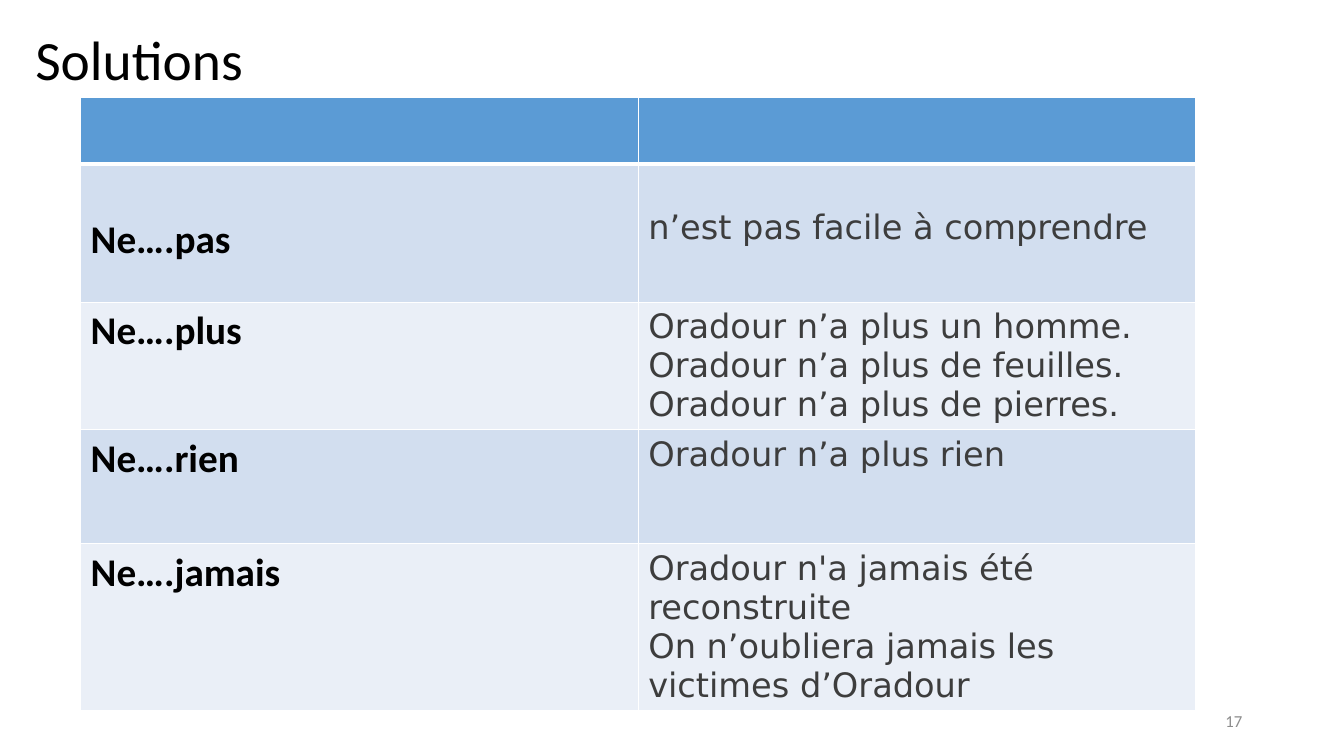
from lxml.etree import SubElement
from pptx import Presentation
from pptx.dml.color import RGBColor
from pptx.enum.text import MSO_ANCHOR as Anchor, PP_ALIGN as Align
from pptx.oxml.ns import qn
from pptx.util import Pt

PX = 9144
COLORS = {
    "black": "000000",
    "answer": "3D3D3D",
    "number": "8C8C8C",
    "border": "FFFFFF",
    "header": "5B9BD5",
    "odd": "D2DEEF",
    "even": "EAEFF7",
}
SOLUTIONS = [
    ("Ne….pas", ["n’est pas facile à comprendre"]),
    ("Ne….plus", ["Oradour n’a plus un homme. Oradour n’a plus de feuilles. "
                  "Oradour n’a plus de pierres."]),
    ("Ne….rien", ["Oradour n’a plus rien"]),
    ("Ne….jamais", ["Oradour n'a jamais été reconstruite",
                    "On n’oubliera jamais les victimes d’Oradour"]),
]
ROW_HEIGHTS = [66, 137, 126, 113, 166]
FIRST_ROW_TOPS = [52, 44]


def px(*lengths):
    return [length * PX for length in lengths]


def color(name):
    return RGBColor.from_string(COLORS[name])


def write(frame, lines, size, tint="black", font="Calibri", bold=False,
          align=Align.LEFT, spacing=None):
    for index, line in enumerate(lines):
        para = frame.add_paragraph() if index else frame.paragraphs[0]
        para.alignment = align
        if spacing:
            para.line_spacing = spacing
        span = para.add_run()
        span.text = line
        span.font.size = Pt(size)
        span.font.name = font
        span.font.bold = bold
        span.font.color.rgb = color(tint)


def style_cell(cell, tint, top=1, bottom=1):
    properties = cell._tc.get_or_add_tcPr()
    for side, width in (("L", 1), ("R", 1), ("T", top), ("B", bottom)):
        line = SubElement(properties, qn(f"a:ln{side}"), w=str(Pt(width)))
        fill = SubElement(line, qn("a:solidFill"))
        SubElement(fill, qn("a:srgbClr"), val=COLORS["border"])
    cell.fill.solid()
    cell.fill.fore_color.rgb = color(tint)


def add_title(page, box):
    title = page.shapes.title
    title.left, title.top, title.width, title.height = px(*box)
    title.text_frame.vertical_anchor = Anchor.MIDDLE
    write(title.text_frame, ["Solutions"], 39.6, spacing=0.9)


def add_solutions(page, box):
    table = page.shapes.add_table(len(ROW_HEIGHTS), 2, *px(*box)).table
    table.horz_banding = False
    for row, height in zip(table.rows, ROW_HEIGHTS):
        row.height = height * PX
    for cell in table.rows[0].cells:
        style_cell(cell, "header", bottom=3)
    for index, (negation, answers) in enumerate(SOLUTIONS, 1):
        left, right = table.rows[index].cells
        for cell, top in zip((left, right), FIRST_ROW_TOPS):
            style_cell(cell, "odd" if index % 2 else "even",
                       top=3 if index == 1 else 1)
            if index == 1:
                cell.margin_top = top * PX
        write(left.text_frame, [negation], 28, bold=True)
        write(right.text_frame, answers, 24, tint="answer", font="DejaVu Sans")


def add_page_number(page, box):
    frame = page.shapes.add_textbox(*px(*box)).text_frame
    frame.word_wrap = True
    frame.vertical_anchor = Anchor.MIDDLE
    write(frame, ["17"], 12, tint="number", align=Align.RIGHT)


def main():
    deck = Presentation()
    deck.slide_width, deck.slide_height = px(1333, 750)
    page = deck.slides.add_slide(deck.slide_layouts[5])
    add_title(page, (25, 28, 1216, 69))
    add_solutions(page, (80, 97, 1106, sum(ROW_HEIGHTS)))
    add_page_number(page, (942, 695, 300, 40))
    deck.save("out.pptx")


if __name__ == "__main__":
    main()
